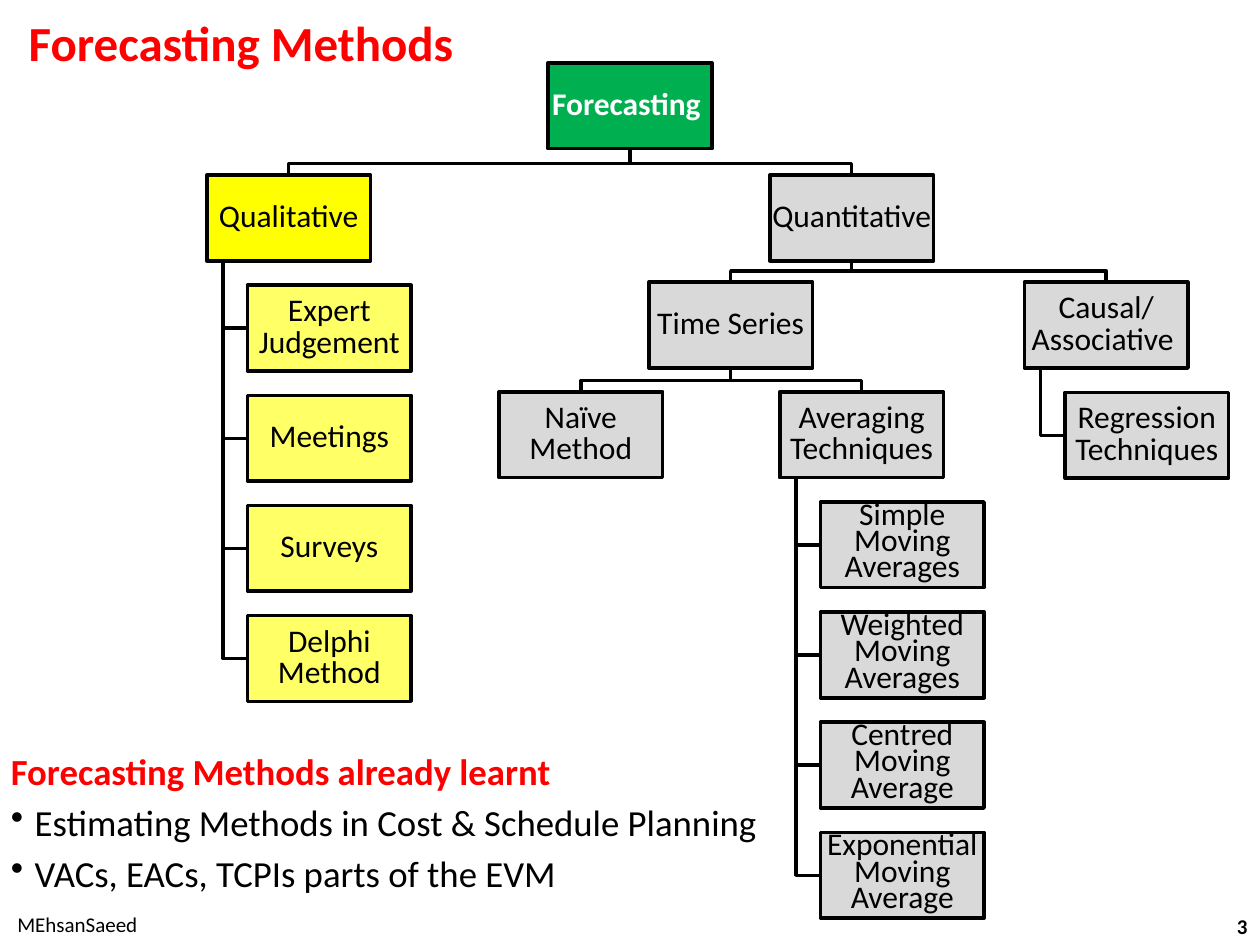
from dataclasses import dataclass

from lxml import etree
from pptx import Presentation
from pptx.dml.color import RGBColor
from pptx.enum import shapes, text
from pptx.oxml.ns import qn
from pptx.util import Cm, Pt


@dataclass(frozen=True)
class Theme:
    font: str = "Calibri"
    red: str = "FF0000"
    black: str = "000000"
    white: str = "FFFFFF"
    green: str = "00B050"
    yellow: str = "FFFF00"
    pale_yellow: str = "FFFF66"
    grey: str = "D9D9D9"
    title: int = 28
    body: int = 21
    box: int = 18
    footer: int = 12
    line: int = 2


T = Theme()
ALIGN = text.PP_ALIGN


def write(p, words, size, color=T.black, bold=False, align=ALIGN.LEFT,
          spacing=None, before=0, bullet=False):
    """Put one formatted run into paragraph p."""
    p.alignment = align
    p.space_before = Pt(before)
    if spacing:
        p.line_spacing = Pt(spacing)
    if bullet:
        pPr = p._p.get_or_add_pPr()
        pPr.set("marL", str(Cm(0.48)))
        pPr.set("indent", str(-Cm(0.48)))
        etree.SubElement(pPr, qn("a:buChar")).set("char", "•")
    r = p.add_run()
    r.text = words
    r.font.name = T.font
    r.font.size = Pt(size)
    r.font.bold = bold
    r.font.color.rgb = RGBColor.from_string(color)


def add_text_frame(left, top, width, height, anchor=text.MSO_ANCHOR.MIDDLE):
    tf = s.shapes.add_textbox(Cm(left), Cm(top), Cm(width), Cm(height)).text_frame
    tf.word_wrap = True
    tf.vertical_anchor = anchor
    return tf


prs = Presentation()
prs.slide_width, prs.slide_height = Cm(25.4), Cm(19.05)
s = prs.slides.add_slide(prs.slide_layouts[6])

# Chart boxes: name -> (left, top, fill, parent, hangs from a side trunk)
BOX_W, BOX_H = 3.3, 1.73
boxes = {
    "Forecasting ": (11.05, 1.27, T.green, None, False),
    "Qualitative": (4.17, 3.53, T.yellow, "Forecasting ", False),
    "Quantitative": (15.52, 3.53, T.grey, "Forecasting ", False),
    "Time Series": (13.08, 5.69, T.grey, "Quantitative", False),
    "Causal/ Associative ": (20.65, 5.69, T.grey, "Quantitative", False),
    "Naïve Method": (10.06, 7.9, T.grey, "Time Series", False),
    "Averaging Techniques": (15.72, 7.9, T.grey, "Time Series", False),
}

# Hanging boxes step down at an equal pitch, indented from their parent
INDENT, PITCH = 0.82, 2.22
hanging = {
    "Qualitative": (T.pale_yellow, [
        "Expert Judgement", "Meetings", "Surveys", "Delphi Method"]),
    "Averaging Techniques": (T.grey, [
        "Simple Moving Averages", "Weighted Moving Averages",
        "Centred Moving Average", "Exponential Moving Average"]),
    "Causal/ Associative ": (T.grey, ["Regression Techniques"]),
}
for parent, (fill, names) in hanging.items():
    px, py = boxes[parent][:2]
    for i, name in enumerate(names, start=1):
        boxes[name] = (px + INDENT, py + i * PITCH, fill, parent, True)

# Links lie behind the boxes
TRUNK, BUS_GAP = 0.33, 0.23
for x, y, fill, parent, hangs in boxes.values():
    if parent is None:
        continue
    px, py = boxes[parent][:2]
    bottom = py + BOX_H
    if hangs:
        trunk, middle = px + TRUNK, y + BOX_H / 2
        points = [(trunk, bottom), (trunk, middle), (x, middle)]
    else:
        start, end, bus = px + BOX_W / 2, x + BOX_W / 2, y - BUS_GAP
        points = [(start, bottom), (start, bus), (end, bus), (end, y)]
    points = [(Cm(a), Cm(b)) for a, b in points]
    builder = s.shapes.build_freeform(*points[0])
    builder.add_line_segments(points[1:], close=False)
    link = builder.convert_to_shape()
    link.shadow.inherit = False
    link.fill.background()
    link.line.color.rgb = RGBColor.from_string(T.black)
    link.line.width = Pt(T.line)

for name, (x, y, fill, parent, hangs) in boxes.items():
    sp = s.shapes.add_shape(shapes.MSO_SHAPE.RECTANGLE,
                            Cm(x), Cm(y), Cm(BOX_W), Cm(BOX_H))
    sp.shadow.inherit = False
    sp.fill.solid()
    sp.fill.fore_color.rgb = RGBColor.from_string(fill)
    sp.line.color.rgb = RGBColor.from_string(T.black)
    sp.line.width = Pt(T.line)
    tf = sp.text_frame
    tf.word_wrap = True
    tf.vertical_anchor = text.MSO_ANCHOR.MIDDLE
    tf.margin_left = tf.margin_right = tf.margin_top = tf.margin_bottom = Cm(0.03)
    is_root = parent is None
    write(tf.paragraphs[0], name, T.box, align=ALIGN.CENTER, bold=is_root,
          color=T.white if is_root else T.black,
          spacing=15 if "Moving" in name else 18)

# Title, notes on known methods, footer
tf = add_text_frame(0.1, 0, 25.25, 1.7)
tf.margin_left = Cm(0.48)
write(tf.paragraphs[0], "Forecasting Methods", T.title, color=T.red, bold=True)

tf = add_text_frame(-0.03, 14.96, 15.7, 3.1, anchor=text.MSO_ANCHOR.TOP)
write(tf.paragraphs[0], "Forecasting Methods already learnt", T.body,
      color=T.red, bold=True, before=4.2)
for item in ("Estimating Methods in Cost & Schedule Planning",
             "VACs, EACs, TCPIs parts of the EVM"):
    write(tf.add_paragraph(), item, T.body, before=4.2, bullet=True)

tf = add_text_frame(-0.03, 18.11, 3.18, 1.02)
write(tf.paragraphs[0], "MEhsanSaeed", T.footer, align=ALIGN.CENTER)
tf = add_text_frame(24.13, 18.16, 1.27, 1.02)
write(tf.paragraphs[0], "3", T.footer, bold=True, align=ALIGN.RIGHT)

prs.save("out.pptx")
